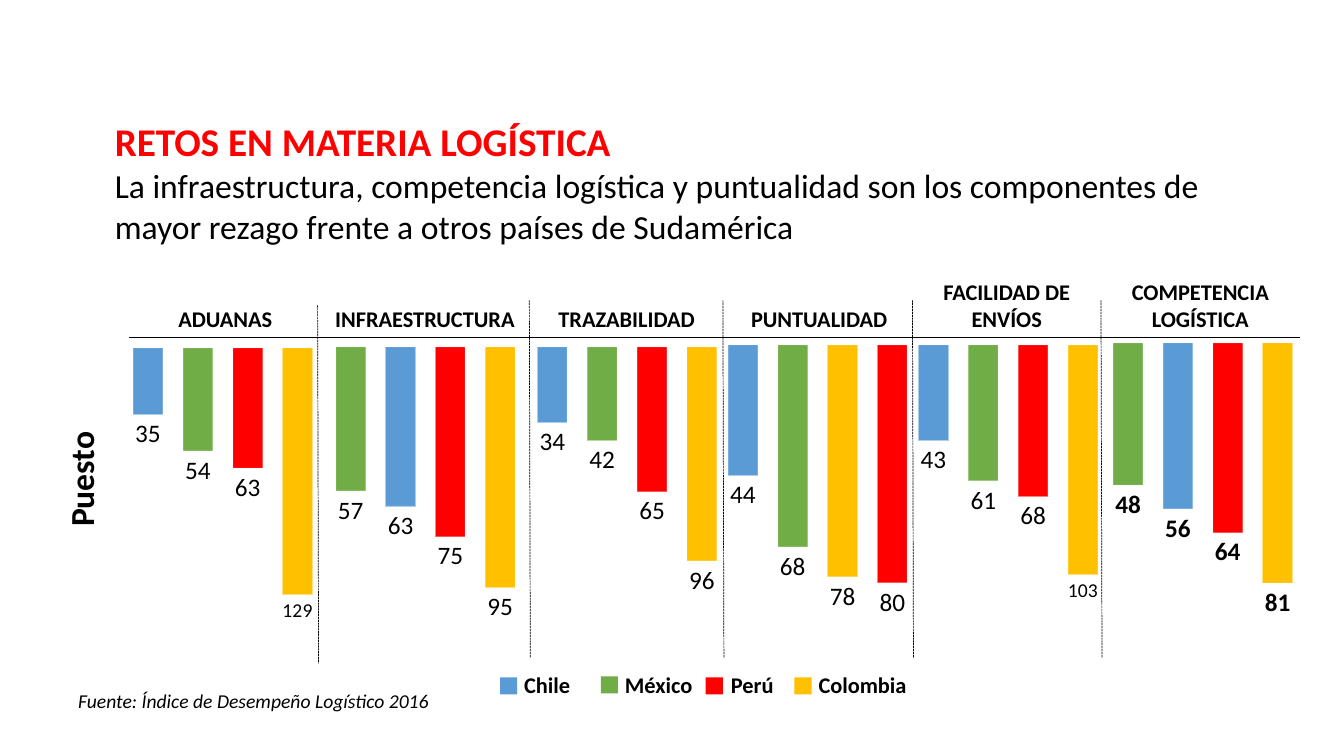
from lxml import etree
from pptx import Presentation
from pptx import util as u
from pptx.chart.data import CategoryChartData
from pptx.dml.color import RGBColor
from pptx.enum import chart as charts, dml, shapes, text
from pptx.oxml import parse_xml
from pptx.oxml.ns import nsdecls, qn

FONT = "Calibri"
COLORS = {
    "black": "000000", "white": "FFFFFF", "title": "FF0000",
    "Chile": "5B9BD5", "México": "70AD47", "Perú": "FF0000", "Colombia": "FFC000",
}
CHART_WIDTH, CHART_HEIGHT = 2.06, 2.8
HEADING_BOTTOM = 3.35
CMPC, MCPC = ("Chile", "México", "Perú", "Colombia"), ("México", "Chile", "Perú", "Colombia")

# heading, heading left, chart left, chart top, axis minimum, countries, ranks
COMPONENTS = [
    ("ADUANAS", 0.98, 1.18, 3.38, -140, CMPC, (35, 54, 63, 129)),
    ("INFRAESTRUCTURA", 2.96, 3.19, 3.37, -105, MCPC, (57, 63, 75, 95)),
    ("TRAZABILIDAD", 4.96, 5.19, 3.37, -120, CMPC, (34, 42, 65, 96)),
    ("PUNTUALIDAD", 6.87, 7.08, 3.35, -90, ("Chile", "México", "Colombia", "Perú"),
     (44, 68, 78, 80)),
    ("FACILIDAD DE\nENVÍOS", 8.73, 8.97, 3.35, -120, CMPC, (43, 61, 68, 103)),
    ("COMPETENCIA LOGÍSTICA", 10.65, 10.9, 3.33, -90, MCPC, (48, 56, 64, 81)),
]
DIVIDERS = [(3.15, 3.03), (5.25, 2.98), (7.17, 2.98), (9.05, 2.98), (10.92, 2.98)]
LEGEND = [("Chile", 4.96, 6.72), ("México", 5.96, 6.71), ("Perú", 7, 6.72),
          ("Colombia", 7.88, 6.72)]
LEGEND_TABS = (1, 2.05, 2.92)


def rgb(name):
    return RGBColor.from_string(COLORS[name])


def set_font(font, size, color="black", bold=False, italic=False):
    font.name, font.size = FONT, u.Pt(size)
    font.bold, font.italic = bold, italic
    font.color.rgb = rgb(color)


def add_text(page, content, place, size, align=text.PP_ALIGN.LEFT, vertical=False,
             tabs=(), **style):
    box = page.shapes.add_textbox(*map(u.Inches, place))
    frame = box.text_frame
    frame.word_wrap = True
    frame.auto_size = text.MSO_AUTO_SIZE.SHAPE_TO_FIT_TEXT
    if vertical:
        frame._txBody.bodyPr.set("vert", "vert270")
    for number, line in enumerate(content.split("\n")):
        para = frame.add_paragraph() if number else frame.paragraphs[0]
        para.alignment = align
        if tabs:
            tab_list = etree.SubElement(para._p.get_or_add_pPr(), qn("a:tabLst"))
            for stop in tabs:
                etree.SubElement(tab_list, qn("a:tab"), pos=str(u.Inches(stop)), algn="l")
        span = para.add_run()
        span.text = line
        set_font(span.font, size, **style)


def add_line(page, start, end, dash=None):
    line = page.shapes.add_connector(
        shapes.MSO_CONNECTOR.STRAIGHT, *map(u.Inches, start + end))
    line.line.color.rgb = rgb("black")
    line.line.width = u.Pt(0.5)
    if dash:
        line.line.dash_style = dash
    etree.SubElement(line._element.spPr, qn("a:effectLst"))


def add_marker(page, country, left, top):
    marker = page.shapes.add_shape(
        shapes.MSO_SHAPE.RECTANGLE, *map(u.Inches, (left, top, 0.17, 0.17)))
    marker.shadow.inherit = False
    marker.fill.solid()
    marker.fill.fore_color.rgb = rgb(country)
    marker.line.fill.background()


def color_bar(bar, country):
    """Fill one bar and give it a half-transparent white outline."""
    bar.format.fill.solid()
    bar.format.fill.fore_color.rgb = rgb(country)
    outline = bar.format.line
    outline.width = u.Pt(0.75)
    outline.color.rgb = rgb("white")
    white = outline._ln.find(".//" + qn("a:srgbClr"))
    etree.SubElement(white, qn("a:alpha"), val="50000")


def set_plot_area(chart):
    """Let the bars use nearly the whole chart frame."""
    area = chart._chartSpace.chart.plotArea
    for old in area.findall(qn("c:layout")):
        area.remove(old)
    sizes = "".join(f'<c:{tag} val="{value}"/>' for tag, value in (
        ("layoutTarget", "inner"), ("xMode", "edge"), ("yMode", "edge"),
        ("x", 0.02), ("y", 0.025), ("w", 0.96), ("h", 0.95)))
    area.insert(0, parse_xml(
        f'<c:layout {nsdecls("c")}><c:manualLayout>{sizes}</c:manualLayout></c:layout>'))


def add_rank_chart(page, left, top, minimum, countries, ranks, bold):
    """Draw ranks as bars hanging down from zero."""
    data = CategoryChartData()
    data.categories = ["1", "2", "3", "4"]
    data.add_series("Series 1", [-rank for rank in ranks])
    place = map(u.Inches, (left, top, CHART_WIDTH, CHART_HEIGHT))
    chart = page.shapes.add_chart(
        charts.XL_CHART_TYPE.COLUMN_CLUSTERED, *place, data).chart
    chart.has_legend = chart.has_title = False
    set_font(chart.font, 10)
    set_plot_area(chart)
    chart.value_axis.minimum_scale, chart.value_axis.maximum_scale = minimum, 0
    chart.value_axis.has_major_gridlines = False
    chart.value_axis.visible = chart.category_axis.visible = False

    plot = chart.plots[0]
    plot.gap_width, plot.vary_by_categories = 65, False
    series = plot.series[0]
    series.invert_if_negative = False
    color_bar(series, "Colombia")
    labels = series.data_labels
    labels.show_value = True
    labels.number_format, labels.number_format_is_linked = "0;0", False
    labels.position = charts.XL_LABEL_POSITION.OUTSIDE_END
    set_font(labels.font, 18, bold=bold)
    for number, (country, rank) in enumerate(zip(countries, ranks)):
        point = series.points[number]
        color_bar(point, country)
        if rank > 99:
            span = point.data_label.text_frame.paragraphs[0].add_run()
            span.text = str(rank)
            set_font(span.font, 14)
            point.data_label.position = charts.XL_LABEL_POSITION.OUTSIDE_END
    for bar in series._element.findall(qn("c:dPt")):
        bar.insert(1, parse_xml(f'<c:invertIfNegative {nsdecls("c")} val="0"/>'))


def main():
    deck = Presentation()
    deck.slide_width, deck.slide_height = u.Inches(13.33), u.Inches(7.5)
    page = deck.slides.add_slide(deck.slide_layouts[6])
    center = text.PP_ALIGN.CENTER

    add_text(page, "RETOS EN MATERIA LOGÍSTICA", (1.04, 1.11, 10.17, 0.57), 28,
             color="title", bold=True)
    add_text(page, "La infraestructura, competencia logística y puntualidad son los "
             "componentes de mayor rezago frente a otros países de Sudamérica",
             (1.04, 1.59, 11.36, 0.91), 24)
    add_text(page, "Fuente: Índice de Desempeño Logístico 2016",
             (-0.11, 6.79, 5.25, 0.34), 14, align=center, italic=True)
    add_text(page, "Puesto", (0.55, 3.99, 0.61, 1.53), 24, align=center,
             vertical=True, bold=True)

    for heading, heading_left, left, top, minimum, countries, ranks in COMPONENTS:
        height = 0.64 if " " in heading else 0.37
        add_rank_chart(page, left, top, minimum, countries, ranks,
                       bold=heading.startswith("COMPETENCIA"))
        add_text(page, heading, (heading_left, HEADING_BOTTOM - height, 2.51, height),
                 16, align=center, bold=True)

    add_line(page, (1.28, 3.35), (12.89, 3.35))
    for left, top in DIVIDERS:
        add_line(page, (left, top), (left + 0.01, top + 3.55), dml.MSO_LINE.SQUARE_DOT)

    add_text(page, "\t".join(country for country, *_ in LEGEND),
             (5.1, 6.61, 4.28, 0.37), 16, tabs=LEGEND_TABS, bold=True)
    for country, left, top in LEGEND:
        add_marker(page, country, left, top)

    deck.save("out.pptx")


if __name__ == "__main__":
    main()
